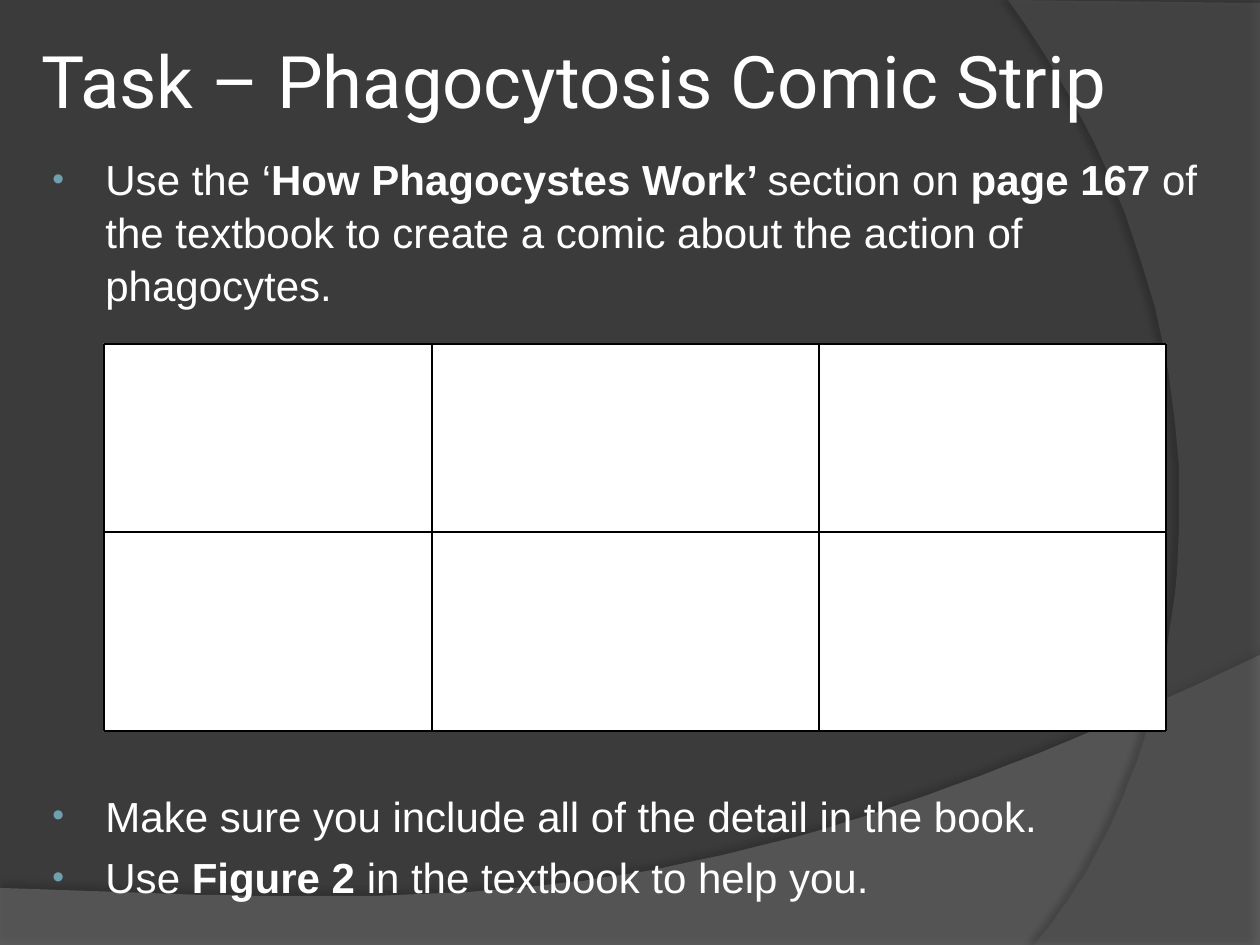
"""Build the phagocytosis comic strip task slide."""
from lxml.etree import SubElement
from pptx import Presentation
from pptx.dml.color import RGBColor
from pptx.enum.shapes import MSO_CONNECTOR, MSO_SHAPE
from pptx.enum.text import MSO_ANCHOR
from pptx.oxml.ns import qn
from pptx.util import Emu, Pt

PX = 914400 / 126
WIDTH, HEIGHT = 1260, 945
COLORS = {"bg": "3B3B3B", "text": "FFFFFF", "bullet": "6EA0B0", "panel": "FFFFFF",
          "edge": "517682", "grid": "000000", "shadow": "000000",
          "hill": "7F7F7F", "arc": "5E5E5E"}

TITLE = "Task – Phagocytosis Comic Strip"
BULLETS = [
    (5, [("Use the ‘", False), ("How Phagocystes Work’ ", True), ("section on ", False),
         ("page 167", True),
         (" of the textbook to create a comic about the action of phagocytes.", False)]),
    (273, [("Make sure you include all of the detail in the book.", False)]),
    (5, [("Use ", False), ("Figure 2", True), (" in the textbook to help you.", False)]),
]
TITLE_BOX = (35, 26, 1191, 107)
BODY_BOX = (35, 145, 1191, 774)
GRID_X = (104, 432, 819, 1166)
GRID_Y = (344, 532, 731)
WAVES = [
    {"color": "hill", "alpha": 45, "corners": [(0, 888), (0, 946), (1260, 946)],
     "curve": [(1260, 655), (704, 919), (493, 906), (0, 888)],
     "shadow": {"alpha": 35, "blur": 4, "dist": 3.5, "dir": 270}},
    {"color": "arc", "alpha": 40, "corners": [(1260, 3), (1260, 945)],
     "curve": [(1034, 945), (1178, 780), (1283, 378), (1008, 0)],
     "shadow": {"alpha": 45, "blur": 4, "dist": 4, "dir": 180}},
]


def px(n):
    return Emu(round(n * PX))


def rgb(name):
    return RGBColor.from_string(COLORS[name])


def add_alpha(color, percent):
    SubElement(color, qn("a:alpha"), val=str(percent * 1000))


def bezier(points, steps=48):
    for i in range(steps + 1):
        t = i / steps
        weights = ((1 - t) ** 3, 3 * t * (1 - t) ** 2, 3 * t * t * (1 - t), t ** 3)
        yield tuple(sum(w * pt[axis] for w, pt in zip(weights, points)) for axis in (0, 1))


def add_wave(s, wave):
    start, *rest = wave["corners"] + list(bezier(wave["curve"]))
    builder = s.shapes.build_freeform(*start, scale=PX)
    builder.add_line_segments(rest, close=True)
    sp = builder.convert_to_shape()
    sp.fill.solid()
    sp.fill.fore_color.rgb = rgb(wave["color"])
    add_alpha(sp._element.spPr.find(".//" + qn("a:srgbClr")), wave["alpha"])
    sp.line.fill.background()
    sp.shadow.inherit = False
    shadow = wave["shadow"]
    outer = SubElement(sp._element.spPr.find(qn("a:effectLst")), qn("a:outerShdw"),
                       blurRad=str(Pt(shadow["blur"])), dist=str(Pt(shadow["dist"])),
                       dir=str(shadow["dir"] * 60000), rotWithShape="0")
    add_alpha(SubElement(outer, qn("a:srgbClr"), val=COLORS["shadow"]), shadow["alpha"])


def add_box(s, box, **frame):
    tf = s.shapes.add_textbox(*map(px, box)).text_frame
    tf.word_wrap = True
    for name, value in frame.items():
        setattr(tf, name, value)
    return tf


def add_run(p, text, **font):
    r = p.add_run()
    r.text = text
    r.font.color.rgb = rgb("text")
    for name, value in font.items():
        setattr(r.font, name, value)


def add_bullet(p):
    pPr = p._p.get_or_add_pPr()
    pPr.set("marL", str(px(58)))
    pPr.set("indent", str(-px(53)))
    SubElement(SubElement(pPr, qn("a:buClr")), qn("a:srgbClr"), val=COLORS["bullet"])
    SubElement(pPr, qn("a:buSzPct"), val="80000")
    SubElement(pPr, qn("a:buFont"), typeface="Arial")
    SubElement(pPr, qn("a:buChar"), char="•")


def add_body(s):
    tf = add_box(s, BODY_BOX)
    for i, (gap, runs) in enumerate(BULLETS):
        p = tf.paragraphs[0] if i == 0 else tf.add_paragraph()
        p.space_before, p.line_spacing = Pt(gap), 1.05
        add_bullet(p)
        for text, bold in runs:
            add_run(p, text, name="Arial", size=Pt(24), bold=bold)


def add_comic_grid(s):
    left, right, top, bottom = GRID_X[0], GRID_X[-1], GRID_Y[0], GRID_Y[-1]
    group = s.shapes.add_group_shape()
    panel = group.shapes.add_shape(MSO_SHAPE.RECTANGLE,
                                   *map(px, (left, top, right - left, bottom - top)))
    panel.fill.solid()
    panel.fill.fore_color.rgb = rgb("panel")
    panel.line.color.rgb, panel.line.width = rgb("edge"), Pt(1.5)
    panel.shadow.inherit = False
    rules = [(left, y, right, y) for y in GRID_Y] + [(x, top, x, bottom) for x in GRID_X]
    for ends in rules:
        rule = group.shapes.add_connector(MSO_CONNECTOR.STRAIGHT, *map(px, ends))
        rule.line.color.rgb, rule.line.width = rgb("grid"), Pt(1.5)
        SubElement(rule._element.spPr, qn("a:effectLst"))


def main():
    prs = Presentation()
    prs.slide_width, prs.slide_height = px(WIDTH), px(HEIGHT)
    s = prs.slides.add_slide(prs.slide_layouts[6])
    s.background.fill.solid()
    s.background.fill.fore_color.rgb = rgb("bg")
    for wave in WAVES:
        add_wave(s, wave)
    margins = {f"margin_{side}": px(6) for side in ("left", "right", "top", "bottom")}
    tf = add_box(s, TITLE_BOX, vertical_anchor=MSO_ANCHOR.MIDDLE, **margins)
    add_run(tf.paragraphs[0], TITLE, name="Roboto", size=Pt(41.4))
    add_body(s)
    add_comic_grid(s)
    prs.save("out.pptx")


if __name__ == "__main__":
    main()
